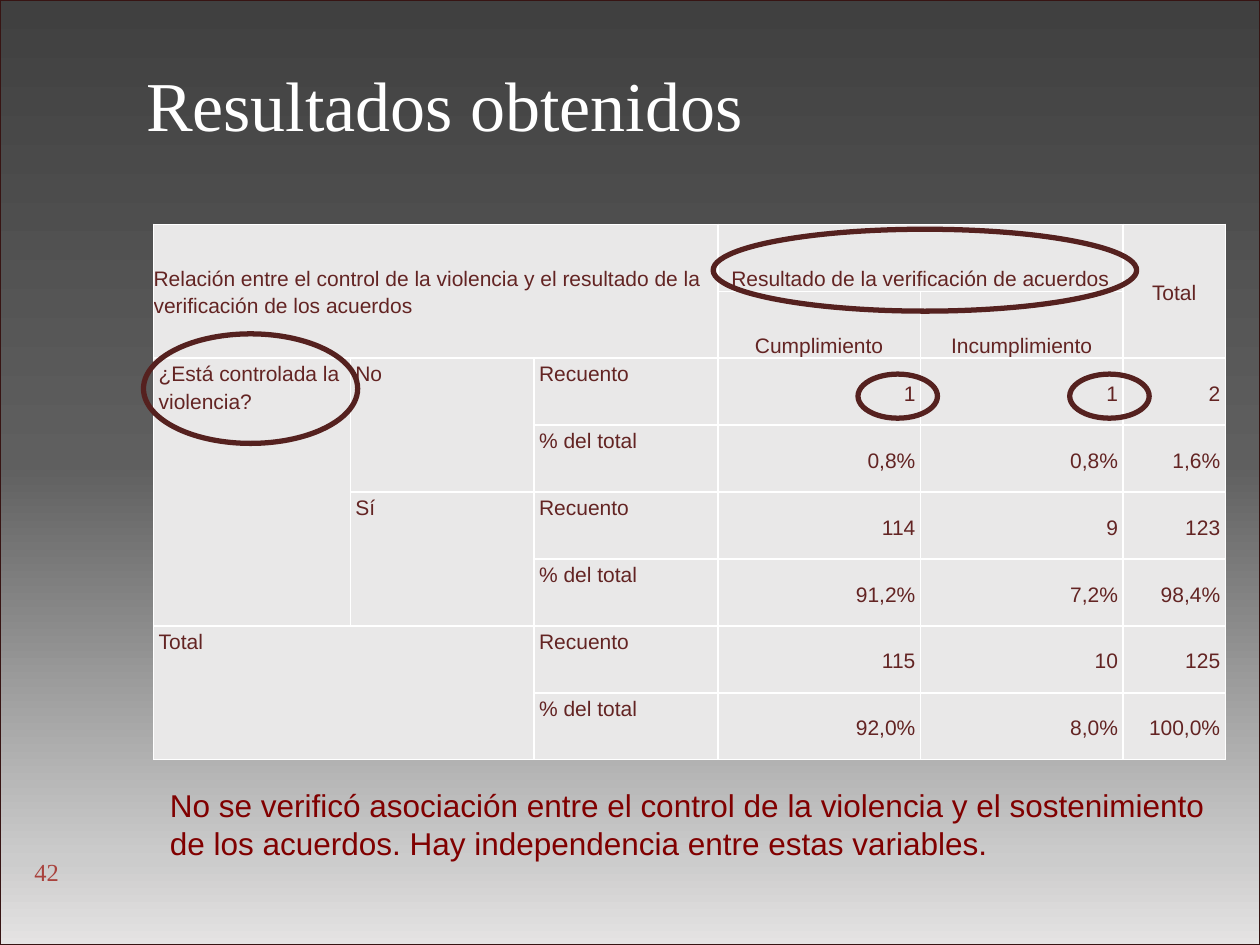
from pptx import Presentation
from pptx.dml.color import RGBColor
from pptx.enum import shapes, text
from pptx.oxml import parse_xml
from pptx.oxml.ns import nsdecls
from pptx.util import Pt

LEFT, CENTER, RIGHT = text.PP_ALIGN.LEFT, text.PP_ALIGN.CENTER, text.PP_ALIGN.RIGHT
TOP, MIDDLE, BOTTOM = (text.MSO_ANCHOR.TOP, text.MSO_ANCHOR.MIDDLE,
                       text.MSO_ANCHOR.BOTTOM)
MARGINS = ("margin_left", "margin_top", "margin_right", "margin_bottom")

COLUMN_WIDTHS = [112.4, 105, 105, 115.8, 115.8, 58.4]
ROW_COUNT = 8
CELL_INDENT = 2.9

# (row, column, rows spanned, columns spanned, words, alignment, anchor)
HEADINGS = [
    (0, 0, 2, 3, "Relación entre el control de la violencia y el resultado "
                 "de la verificación de los acuerdos", LEFT, MIDDLE),
    (0, 3, 1, 2, "Resultado de la verificación de acuerdos", CENTER, BOTTOM),
    (0, 5, 2, 1, "Total", CENTER, MIDDLE),
    (1, 3, 1, 1, "Cumplimiento", CENTER, BOTTOM),
    (1, 4, 1, 1, "Incumplimiento", CENTER, BOTTOM),
    (2, 0, 4, 1, "¿Está controlada la violencia?", LEFT, TOP),
    (2, 1, 2, 1, "No", LEFT, TOP),
    (4, 1, 2, 1, "Sí", LEFT, TOP),
    (6, 0, 2, 2, "Total", LEFT, TOP),
]
RESULTS = [
    ("Recuento", "1", "1", "2"),
    ("% del total", "0,8%", "0,8%", "1,6%"),
    ("Recuento", "114", "9", "123"),
    ("% del total", "91,2%", "7,2%", "98,4%"),
    ("Recuento", "115", "10", "125"),
    ("% del total", "92,0%", "8,0%", "100,0%"),
]
RINGS = [
    (611.3, 213.8, 45.4, 25.2),
    (490.3, 213.8, 45.4, 25.2),
    (82, 190.8, 122.4, 62.6),
    (407.5, 131, 242, 46.8),
]


def color(value):
    return RGBColor.from_string(value)


def points(*values):
    return [Pt(value) for value in values]


def set_all(target, values):
    for name, value in values.items():
        setattr(target, name, value)


def write(frame, words, size, face, ink, **paragraph_format):
    para = frame.paragraphs[0]
    set_all(para, paragraph_format)
    span = para.add_run()
    span.text = words
    set_all(span.font, {"size": Pt(size), "name": face, "bold": False})
    span.font.color.rgb = color(ink)


def add_plain_shape(page, kind, box):
    shape = page.shapes.add_shape(kind, *points(*box))
    shape.shadow.inherit = False
    shape.fill.background()
    shape.line.fill.background()
    return shape


def outline(shape, ink, width):
    shape.line.color.rgb = color(ink)
    shape.line.width = Pt(width)


def add_backdrop(page, box):
    """Place the grey gradient panel behind everything else."""
    panel = add_plain_shape(page, shapes.MSO_SHAPE.RECTANGLE, box)
    stops = [(0, "404040"), (49, "5F5F5F"), (91, "CCCCCC"), (100, "E5E3E3")]
    stop_xml = "".join(
        f'<a:gs pos="{place * 1000}"><a:srgbClr val="{ink}"/></a:gs>'
        for place, ink in stops)
    gradient = parse_xml(
        f'<a:gradFill {nsdecls("a")} rotWithShape="1"><a:gsLst>{stop_xml}</a:gsLst>'
        '<a:lin ang="5400000" scaled="0"/></a:gradFill>')
    properties = panel.element.spPr
    properties.replace(properties.find("{*}noFill"), gradient)
    outline(panel, "371413", 1)
    page.shapes.element.insert(2, panel.element)


def place_title(page, box):
    title = page.shapes.title
    set_all(title, dict(zip(("left", "top", "width", "height"), points(*box))))
    frame = title.text_frame
    set_all(frame, {"word_wrap": False, "vertical_anchor": TOP,
                    "auto_size": text.MSO_AUTO_SIZE.SHAPE_TO_FIT_TEXT})
    write(frame, "Resultados obtenidos", 40, "Times New Roman", "FFFFFF",
          alignment=LEFT)


def add_page_number(page, box):
    badge = add_plain_shape(page, shapes.MSO_SHAPE.OVAL, box)
    frame = badge.text_frame
    set_all(frame, {**dict.fromkeys(MARGINS, 0), "vertical_anchor": TOP})
    write(frame, "42", 14, "Times New Roman", "A9423D", alignment=LEFT)


def style_cell(cell):
    set_all(cell, dict.fromkeys(MARGINS, 0))
    cell.fill.solid()
    cell.fill.fore_color.rgb = color("E9E8E8")
    properties = cell._tc.get_or_add_tcPr()
    for place, side in enumerate(("lnL", "lnR", "lnT", "lnB")):
        properties.insert(place, parse_xml(
            f'<a:{side} {nsdecls("a")} w="{Pt(1)}"><a:solidFill>'
            f'<a:srgbClr val="FFFFFF"/></a:solidFill></a:{side}>'))


def fill_cell(cell, words, alignment, anchor, indent=CELL_INDENT, spacing=Pt(16)):
    cell.vertical_anchor = anchor
    write(cell.text_frame, words, 12, "Arial", "632423",
          alignment=alignment, line_spacing=spacing)
    properties = cell.text_frame.paragraphs[0]._p.get_or_add_pPr()
    for side in ("marL", "marR"):
        properties.set(side, str(Pt(indent)))
    properties.set("indent", "0")


def add_results_table(page, box):
    table = page.shapes.add_table(
        ROW_COUNT, len(COLUMN_WIDTHS), *points(*box)).table
    set_all(table, {"first_row": False, "horz_banding": False})
    for column, width in zip(table.columns, COLUMN_WIDTHS):
        column.width = Pt(width)
    for row in table.rows:
        row.height = Pt(box[3] / ROW_COUNT)
        for cell in row.cells:
            style_cell(cell)

    for row, column, down, across, words, alignment, anchor in HEADINGS:
        cell = table.cell(row, column)
        if down * across > 1:
            cell.merge(table.cell(row + down - 1, column + across - 1))
        corner = {"indent": 0, "spacing": 1.15} if row == column == 0 else {}
        fill_cell(cell, words, alignment, anchor, **corner)

    for row, (label, *values) in enumerate(RESULTS, 2):
        fill_cell(table.cell(row, 2), label, LEFT, TOP)
        for column, value in enumerate(values, 3):
            fill_cell(table.cell(row, column), value, RIGHT, MIDDLE)


def add_conclusion(page, box):
    frame = page.shapes.add_textbox(*points(*box)).text_frame
    set_all(frame, {"word_wrap": True,
                    "auto_size": text.MSO_AUTO_SIZE.SHAPE_TO_FIT_TEXT})
    write(frame, "No se verificó asociación entre el control de la violencia y "
                 "el sostenimiento de los acuerdos. Hay independencia entre "
                 "estas variables.", 18, "Arial", "800000")


def add_ring(page, box):
    outline(add_plain_shape(page, shapes.MSO_SHAPE.OVAL, box), "55211F", 3)


def main():
    deck = Presentation()
    deck.slide_width, deck.slide_height = points(720, 540)
    page = deck.slides.add_slide(deck.slide_layouts[5])
    add_backdrop(page, (0, 0, 720, 540))
    place_title(page, (76.3, 31.7, 359.3, 55.4))
    add_page_number(page, (14.4, 484.6, 36, 36))
    add_results_table(page, (87.8, 128.2, sum(COLUMN_WIDTHS), 306))
    add_conclusion(page, (90, 445.7, 607, 51))
    for box in RINGS:
        add_ring(page, box)
    deck.save("out.pptx")


if __name__ == "__main__":
    main()
